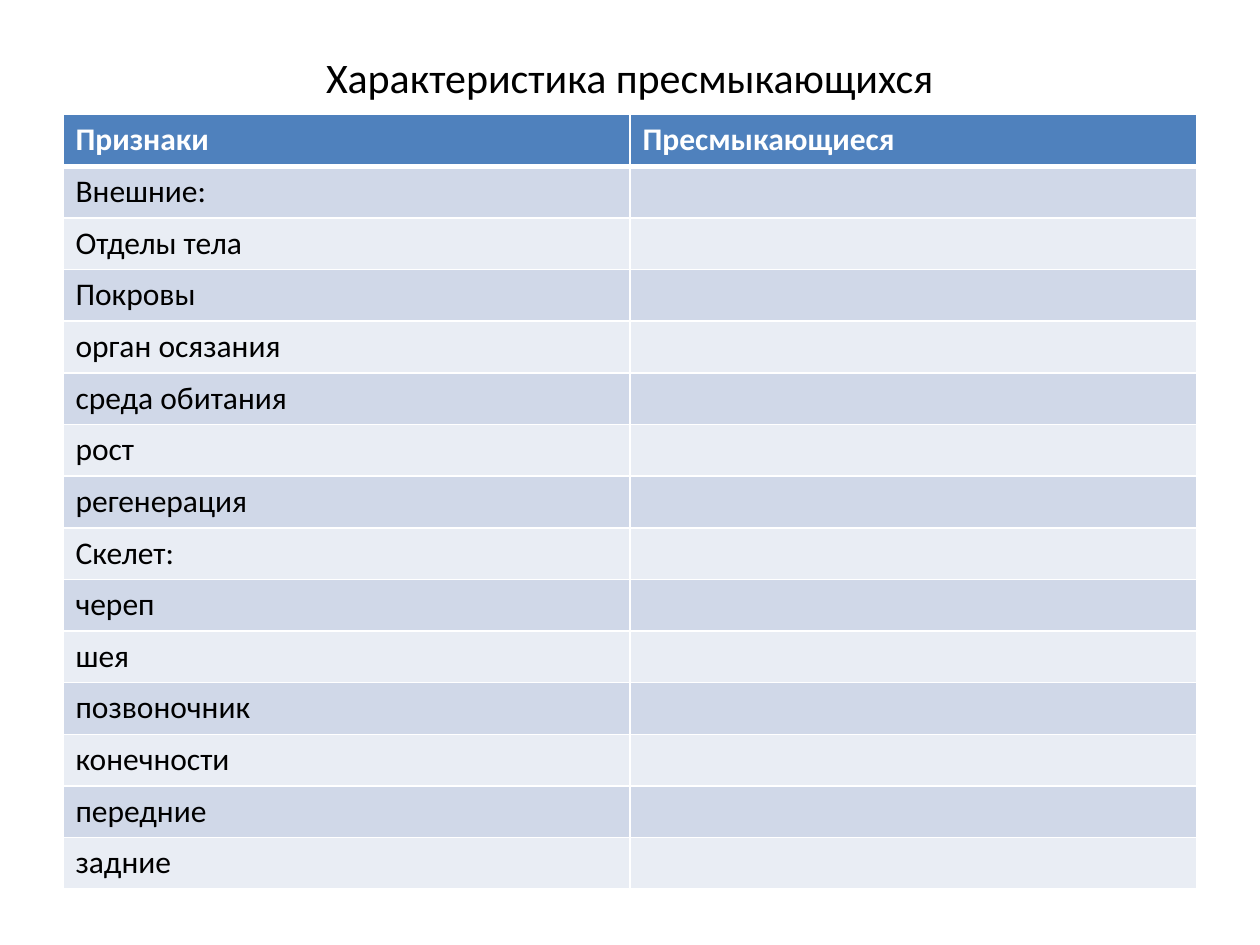
from lxml.etree import SubElement
from pptx import Presentation
from pptx.dml.color import RGBColor
from pptx.enum.text import MSO_ANCHOR, PP_ALIGN
from pptx.oxml.ns import qn
from pptx.util import Inches, Pt

FONT = "Calibri"
WHITE, BLACK = "FFFFFF", "000000"
HEADER_FILL = "4F81BD"
BAND_FILLS = ("D0D8E8", "E9EDF4")

# Grid of the page, in inches
MARGIN, CONTENT_WIDTH = 0.5, 9
TITLE_TOP, TABLE_TOP = 0.3, 0.91
ROW_HEIGHT = 0.41

TITLE = "Характеристика пресмыкающихся"
HEADERS = ("Признаки", "Пресмыкающиеся")
FEATURES = (
    "Внешние:", "Отделы тела", "Покровы", "орган осязания",
    "среда обитания", "рост", "регенерация", "Скелет:", "череп",
    "шея", "позвоночник", "конечности", "передние", "задние",
)


def color(hex_string):
    return RGBColor.from_string(hex_string)


def write(frame, text, size=18, fill=BLACK, bold=False, align=PP_ALIGN.LEFT):
    para = frame.paragraphs[0]
    para.alignment = align
    span = para.add_run()
    span.text = text
    span.font.name = FONT
    span.font.size = Pt(size)
    span.font.bold = bold
    span.font.color.rgb = color(fill)


def set_borders(cell, **widths):
    """Draw white cell borders; L, R, T and B give widths in points."""
    properties = cell._tc.get_or_add_tcPr()
    for side in "LRTB":
        line = SubElement(properties, qn(f"a:ln{side}"),
                          w=str(Pt(widths.get(side, 1))))
        solid = SubElement(line, qn("a:solidFill"))
        SubElement(solid, qn("a:srgbClr"), val=WHITE)


def add_title(page, text):
    title = page.shapes.title
    title.left, title.top = Inches(MARGIN), Inches(TITLE_TOP)
    title.width = Inches(CONTENT_WIDTH)
    title.height = Inches(TABLE_TOP - TITLE_TOP)
    title.text_frame.vertical_anchor = MSO_ANCHOR.MIDDLE
    write(title.text_frame, text, size=24, align=PP_ALIGN.CENTER)


def add_feature_table(page, headers, features):
    rows = [headers] + [(feature, "") for feature in features]
    table = page.shapes.add_table(
        len(rows), len(headers), Inches(MARGIN), Inches(TABLE_TOP),
        Inches(CONTENT_WIDTH), Inches(ROW_HEIGHT * len(rows))).table

    for row_index, texts in enumerate(rows):
        is_header = row_index == 0
        fill = HEADER_FILL if is_header else BAND_FILLS[(row_index - 1) % 2]
        for column_index, text in enumerate(texts):
            cell = table.cell(row_index, column_index)
            # A thick line parts the header from the body
            set_borders(cell, B=3 if is_header else 1,
                        T=3 if row_index == 1 else 1)
            cell.fill.solid()
            cell.fill.fore_color.rgb = color(fill)
            if text:
                write(cell.text_frame, text, bold=is_header,
                      fill=WHITE if is_header else BLACK)


def main():
    deck = Presentation()
    deck.slide_width, deck.slide_height = Inches(10), Inches(7.5)
    page = deck.slides.add_slide(deck.slide_layouts.get_by_name("Title Only"))
    add_title(page, TITLE)
    add_feature_table(page, HEADERS, FEATURES)
    deck.save("out.pptx")


if __name__ == "__main__":
    main()
